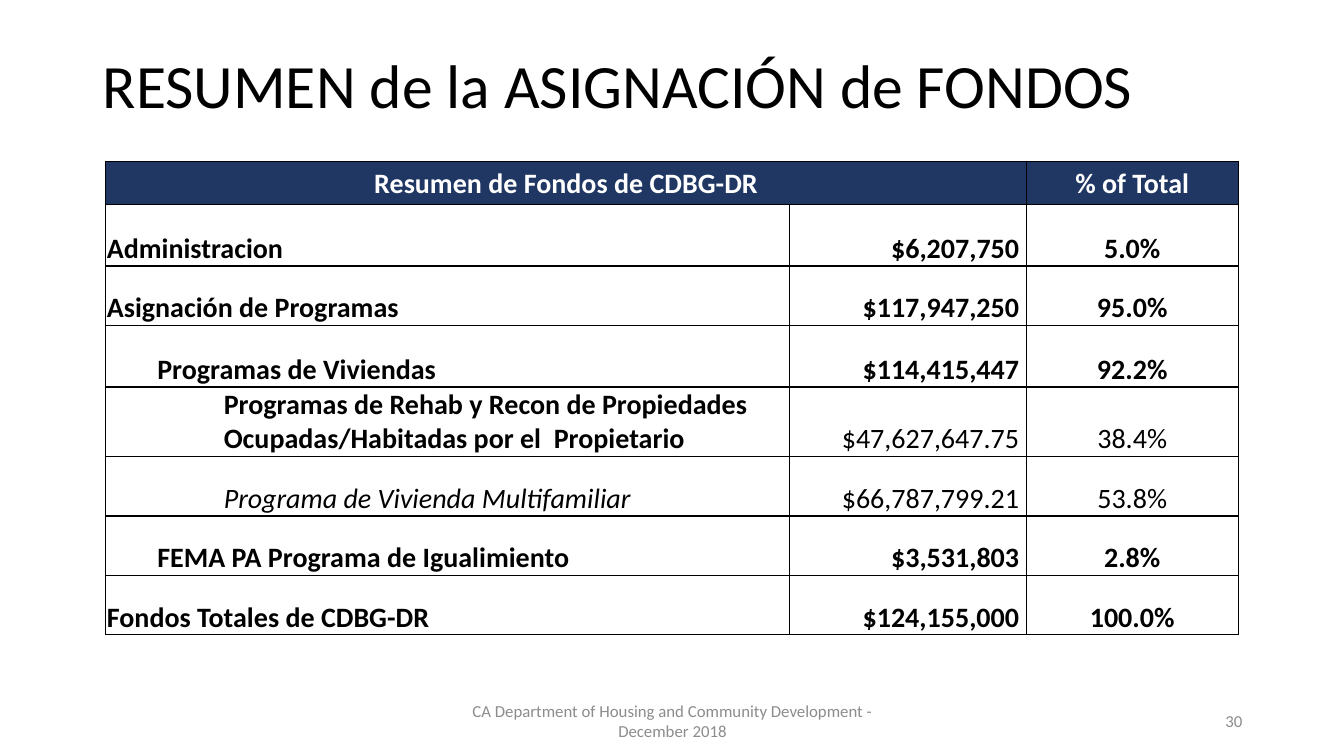
from lxml.etree import SubElement
from pptx import Presentation
from pptx.dml.color import RGBColor
from pptx.enum.text import MSO_VERTICAL_ANCHOR as Anchor, PP_PARAGRAPH_ALIGNMENT as Align
from pptx.oxml.ns import qn
from pptx.util import Inches, Pt

FONT = "Calibri"
BLACK, WHITE, NAVY, GRAY = "000000", "FFFFFF", "203764", "8C8C8C"
COLUMN_WIDTHS = [6.78, 2.35, 2.1]
ROW_HEIGHTS = [0.43, 0.61, 0.59, 0.61, 0.69, 0.59, 0.59, 0.59]
HEADINGS = ["Resumen de Fondos de CDBG-DR", "", "% of Total"]
FUNDS = [
    # label, amount, share, level, label style, figures in bold
    ("Administracion", "$6,207,750", "5.0%", 0, "bold", True),
    ("Asignación de Programas", "$117,947,250", "95.0%", 0, "bold", True),
    ("Programas de Viviendas", "$114,415,447", "92.2%", 1, "bold", True),
    ("Programas de Rehab y Recon de Propiedades Ocupadas/Habitadas por el  Propietario",
     "$47,627,647.75", "38.4%", 2, "bold", False),
    ("Programa de Vivienda Multifamiliar", "$66,787,799.21", "53.8%", 2, "italic", False),
    ("FEMA PA Programa de Igualimiento", "$3,531,803", "2.8%", 1, "bold", True),
    ("Fondos Totales de CDBG-DR", "$124,155,000", "100.0%", 0, "bold", True),
]


def rgb(color):
    """Return the colour for a hex string."""
    return RGBColor.from_string(color)


def format_text(text_frame, text, size, color, align, bold=False, italic=False):
    """Write one paragraph and format its run."""
    text_frame.text = text
    paragraph = text_frame.paragraphs[0]
    paragraph.alignment = align
    for run in paragraph.runs:
        font = run.font
        font.name, font.size = FONT, Pt(size)
        font.bold, font.italic = bold, italic
        font.color.rgb = rgb(color)
    return paragraph


def add_text(slide, box, text, size, color, align):
    """Add a wrapped, vertically centred text box."""
    shape = slide.shapes.add_textbox(*[Inches(length) for length in box])
    text_frame = shape.text_frame
    text_frame.word_wrap = True
    text_frame.vertical_anchor = Anchor.MIDDLE
    return format_text(text_frame, text, size, color, align)


def add_borders(cell):
    """Draw a thin black line on each side of a cell."""
    properties = cell._tc.get_or_add_tcPr()
    for side in ("a:lnL", "a:lnR", "a:lnT", "a:lnB"):
        line = SubElement(properties, qn(side), w=str(Pt(1)))
        fill = SubElement(line, qn("a:solidFill"))
        SubElement(fill, qn("a:srgbClr"), val=BLACK)


def fill_cell(cell, text, color, align, anchor, bold=True, italic=False):
    """Write a table cell with tight margins."""
    cell.margin_left = cell.margin_right = cell.margin_top = Inches(0.01)
    cell.margin_bottom = 0
    cell.vertical_anchor = anchor
    return format_text(cell.text_frame, text, 20, color, align, bold, italic)


def add_fund_row(table, row, fund):
    """Fill one row with a fund, its amount and its share."""
    label, amount, share, level, style, bold = fund
    label_cell, amount_cell, share_cell = [table.cell(row, column) for column in range(3)]
    paragraph = fill_cell(label_cell, label, BLACK, Align.LEFT, Anchor.BOTTOM,
                          style == "bold", style == "italic")
    paragraph._p.get_or_add_pPr().set("marL", str(Inches(0.5 * level)))
    if level == 2:
        label_cell.margin_left = Inches(0.17)
    fill_cell(amount_cell, amount, BLACK, Align.RIGHT, Anchor.BOTTOM, bold)
    amount_cell.margin_right = Inches(0.07)
    fill_cell(share_cell, share, BLACK, Align.CENTER, Anchor.BOTTOM, bold)


def add_funds_table(slide):
    """Add the table of funds."""
    frame = slide.shapes.add_table(
        len(ROW_HEIGHTS), len(COLUMN_WIDTHS), Inches(1.05), Inches(1.6),
        Inches(sum(COLUMN_WIDTHS)), Inches(sum(ROW_HEIGHTS)))
    table = frame.table
    table.first_row = table.horz_banding = False
    for column, width in zip(table.columns, COLUMN_WIDTHS):
        column.width = Inches(width)
    for row, height in zip(table.rows, ROW_HEIGHTS):
        row.height = Inches(height)
    for cell in table.iter_cells():
        add_borders(cell)
        cell.fill.background()
    for column, heading in enumerate(HEADINGS):
        cell = table.cell(0, column)
        fill_cell(cell, heading, WHITE, Align.CENTER, Anchor.MIDDLE)
        cell.fill.solid()
        cell.fill.fore_color.rgb = rgb(NAVY)
    table.cell(0, 0).merge(table.cell(0, 1))
    for row, fund in enumerate(FUNDS, start=1):
        add_fund_row(table, row, fund)


def main():
    """Build the slide and save it."""
    presentation = Presentation()
    presentation.slide_width, presentation.slide_height = Inches(13.33), Inches(7.5)
    slide = presentation.slides.add_slide(presentation.slide_layouts[6])
    title = add_text(slide, (0.92, 0.15, 11.5, 1.45), "RESUMEN de la ASIGNACIÓN de FONDOS",
                     44, BLACK, Align.LEFT)
    title.line_spacing = 0.9
    add_funds_table(slide)
    add_text(slide, (9.42, 6.95, 3, 0.4), "30", 12, GRAY, Align.RIGHT)
    add_text(slide, (4.42, 6.95, 4.5, 0.4),
             "CA Department of Housing and Community Development - December 2018",
             12, GRAY, Align.CENTER)
    presentation.save("out.pptx")


if __name__ == "__main__":
    main()
